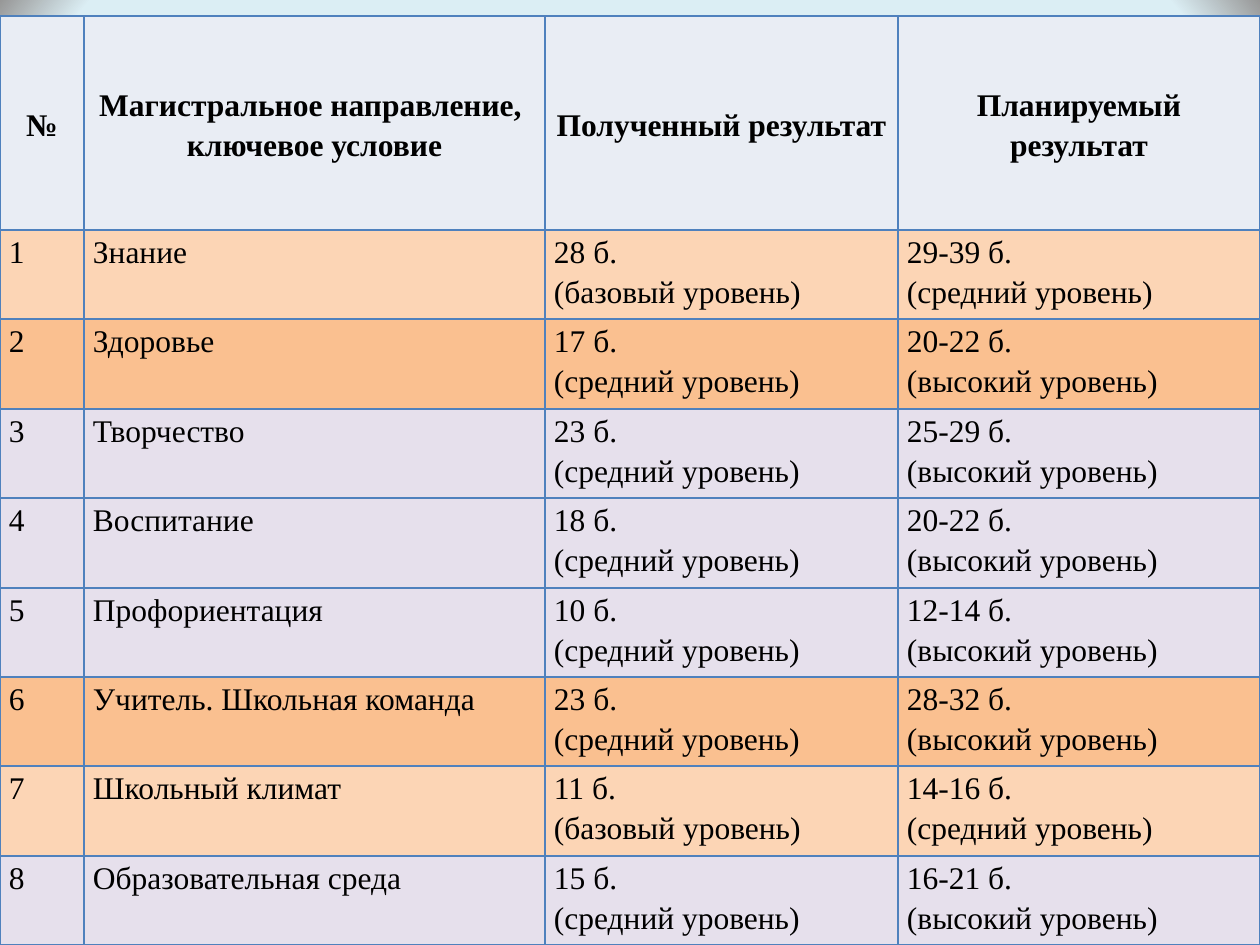
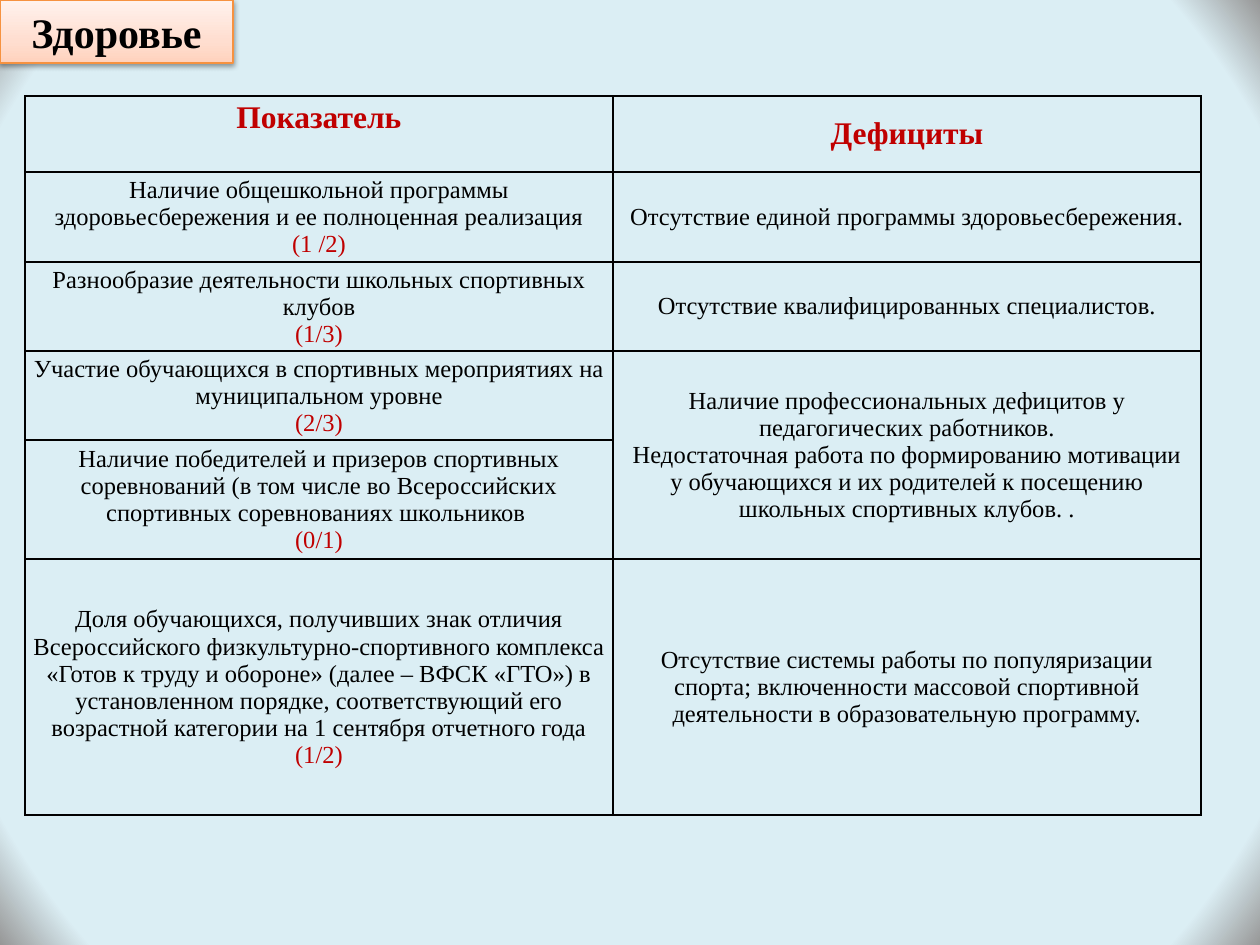
"""Build two slides on school self-assessment results and health deficits."""
from dataclasses import dataclass
from typing import NamedTuple

from lxml import etree
from pptx import Presentation
from pptx.dml.color import RGBColor
from pptx.enum.text import MSO_ANCHOR, MSO_AUTO_SIZE, PP_ALIGN
from pptx.oxml import parse_xml
from pptx.oxml.ns import nsdecls, qn
from pptx.util import Emu, Pt

CENTER, JUSTIFY = PP_ALIGN.CENTER, PP_ALIGN.JUSTIFY
TOP, MIDDLE = MSO_ANCHOR.TOP, MSO_ANCHOR.MIDDLE
FIXED_SIZE = MSO_AUTO_SIZE.NONE
TITLE_ONLY, BLANK = 5, 6
PX_PER_INCH = 126
SLIDE_W, SLIDE_H = 1260, 945
FONT = "Times New Roman"

COLORS = {
    "text": "000000", "accent": "C00000", "sky": "DBEEF4", "corner": "979797",
    "blue_line": "4F81BD", "black_line": "000000", "header": "E9EDF4",
    "basic": "FCD5B5", "focus": "FAC090", "middle": "E6E0EC",
    "badge_line": "F69240", "badge_low": "FFD2BD", "badge_mid": "FFDED0",
    "badge_high": "FFF2ED", "shadow": "000000",
}


class Stop(NamedTuple):
    """A gradient stop, with position and opacity in percent."""
    position: int
    color: str
    opacity: int = 100


class Margins(NamedTuple):
    """Cell insets in px."""
    left: int
    top: int
    right: int
    bottom: int


@dataclass(frozen=True)
class Style:
    """The look of a paragraph."""
    size: int
    color: str = "text"
    bold: bool = False
    align: PP_ALIGN = CENTER
    spacing: float = 1.0


@dataclass(frozen=True)
class CellLook:
    """The look of a table cell."""
    border: str
    margins: Margins
    fill: str | None = None
    anchor: MSO_ANCHOR = MIDDLE


class Para(NamedTuple):
    """A paragraph and its style."""
    text: str
    style: Style


class Direction(NamedTuple):
    """A direction with its obtained and planned results."""
    name: str
    score: str
    level: str
    planned_score: str
    planned_level: str
    tone: str


class Indicator(NamedTuple):
    """A health indicator, its score, the deficits and the row height."""
    name: str
    score: str
    deficits: tuple[str, ...]
    height: int


HEADINGS = ("№", "Магистральное направление, \nключевое условие",
            "Полученный результат", "Планируемый результат")
DIRECTIONS = (
    Direction("Знание", "28", "базовый", "29-39", "средний", "basic"),
    Direction("Здоровье", "17", "средний", "20-22", "высокий", "focus"),
    Direction("Творчество", "23", "средний", "25-29", "высокий", "middle"),
    Direction("Воспитание", "18", "средний", "20-22", "высокий", "middle"),
    Direction("Профориентация", "10", "средний", "12-14", "высокий", "middle"),
    Direction("Учитель. Школьная команда", "23", "средний", "28-32", "высокий", "focus"),
    Direction("Школьный климат", "11", "базовый", "14-16", "средний", "basic"),
    Direction("Образовательная среда", "15", "средний", "16-21", "высокий", "middle"),
)
INDICATORS = (
    Indicator("Наличие общешкольной программы здоровьесбережения и ее полноценная реализация",
              "(1 /2)", ("Отсутствие единой программы здоровьесбережения.",), 90),
    Indicator("Разнообразие деятельности школьных спортивных клубов",
              "(1/3)", ("Отсутствие квалифицированных специалистов.",), 89),
    Indicator("Участие обучающихся в спортивных мероприятиях на муниципальном уровне", "(2/3)",
              ("Наличие профессиональных дефицитов у педагогических работников.",
               "Недостаточная работа по формированию мотивации у обучающихся и их родителей "
               "к посещению школьных спортивных клубов. ."), 89),
    Indicator("Наличие победителей и призеров спортивных соревнований (в том числе во "
              "Всероссийских спортивных соревнованиях школьников ", "(0/1)", (), 119),
    Indicator("Доля обучающихся, получивших знак отличия Всероссийского физкультурно-спортивного "
              "комплекса «Готов к труду и обороне» (далее ‒ ВФСК «ГТО») в установленном порядке, "
              "соответствующий его возрастной категории на 1 сентября отчетного года", "(1/2)",
              ("Отсутствие системы работы по популяризации спорта; включенности массовой "
               "спортивной деятельности в образовательную программу.",), 256),
)


def px(length: int) -> Emu:
    """Turn px into EMU."""
    return Emu(round(length * 914400 / PX_PER_INCH))


def split(total: int, count: int) -> list[int]:
    """Divide a length into nearly equal whole px parts."""
    edges = [round(total * step / count) for step in range(count + 1)]
    return [end - start for start, end in zip(edges, edges[1:])]


def rgb(name: str) -> RGBColor:
    """Look up a palette colour."""
    return RGBColor.from_string(COLORS[name])


def color_xml(name: str, opacity: int = 100) -> str:
    """Return a colour element with its opacity."""
    return f'<a:srgbClr val="{COLORS[name]}"><a:alpha val="{opacity * 1000}"/></a:srgbClr>'


def fill_gradient(fill, holder, stops: tuple[Stop, ...], direction: str) -> None:
    """Give a fill several gradient stops and a direction."""
    fill.gradient()
    stops_xml = "".join(f'<a:gs pos="{s.position * 1000}">{color_xml(s.color, s.opacity)}</a:gs>'
                        for s in stops)
    source = parse_xml(f'<a:gradFill {nsdecls("a")}><a:gsLst>{stops_xml}</a:gsLst>'
                       f'{direction}</a:gradFill>')
    gradient = holder.find(f'.//{qn("a:gradFill")}')
    gradient[:] = list(source)


def paint_background(master) -> None:
    """Put the shared sky gradient on the master."""
    fill_gradient(
        master.background.fill, master.element,
        (Stop(91, "sky", 44), Stop(100, "corner")),
        '<a:path path="circle"><a:fillToRect l="50000" t="50000" r="50000" b="50000"/></a:path>')


def write(frame, paras: list[Para]) -> None:
    """Write styled paragraphs into a text frame."""
    for index, (text, style) in enumerate(paras):
        paragraph = frame.add_paragraph() if index else frame.paragraphs[0]
        paragraph.text = text
        paragraph.alignment = style.align
        paragraph.line_spacing = style.spacing
        for run in paragraph.runs:
            run.font.name = FONT
            run.font.size = Pt(style.size)
            run.font.bold = style.bold
            run.font.color.rgb = rgb(style.color)


def draw_cell(cell, paras: list[Para], look: CellLook) -> None:
    """Frame, fill and write a table cell."""
    properties = cell._tc.get_or_add_tcPr()
    for side in "LRTB":
        border = etree.SubElement(properties, qn(f"a:ln{side}"), w=str(Pt(1)))
        solid = etree.SubElement(border, qn("a:solidFill"))
        etree.SubElement(solid, qn("a:srgbClr"), val=COLORS[look.border])
    if look.fill:
        cell.fill.solid()
        cell.fill.fore_color.rgb = rgb(look.fill)
    else:
        cell.fill.background()
    cell.vertical_anchor = look.anchor
    cell.margin_left, cell.margin_top, cell.margin_right, cell.margin_bottom = map(px, look.margins)
    write(cell.text_frame, paras)


def add_grid(slide, left: int, top: int, widths: list[int], heights: list[int]):
    """Add a plain table with the given column widths and row heights."""
    table = slide.shapes.add_table(len(heights), len(widths), px(left), px(top),
                                   px(sum(widths)), px(sum(heights))).table
    table.first_row = table.horz_banding = False
    for column, width in zip(table.columns, widths):
        column.width = px(width)
    for row, height in zip(table.rows, heights):
        row.height = px(height)
    return table


def build_results(slide) -> None:
    """Draw the table of obtained and planned results."""
    heading = Style(18, bold=True, spacing=1.15)
    body = Style(18, align=JUSTIFY, spacing=1.15)
    margins = Margins(9, 0, 9, 0)
    top, header_height = 16, 214
    rows = split(SLIDE_H - top - header_height, len(DIRECTIONS))
    table = add_grid(slide, 0, top, [84, 461, 353, 362], [header_height, *rows])
    for column, text in enumerate(HEADINGS):
        draw_cell(table.cell(0, column), [Para(text, heading)],
                  CellLook("blue_line", margins, "header"))
    for number, item in enumerate(DIRECTIONS, 1):
        look = CellLook("blue_line", margins, item.tone, TOP)
        contents = ((str(number),), (item.name,),
                    (f"{item.score} б.", f"({item.level} уровень)"),
                    (f"{item.planned_score} б.", f"({item.planned_level} уровень)"))
        for column, lines in enumerate(contents):
            draw_cell(table.cell(number, column), [Para(line, body) for line in lines], look)


def build_badge(title) -> None:
    """Turn the title placeholder into the corner badge."""
    title.left, title.top, title.width, title.height = map(px, (0, 0, 233, 63))
    fill_gradient(title.fill, title.element,
                  (Stop(0, "badge_low"), Stop(35, "badge_mid"), Stop(100, "badge_high")),
                  '<a:lin ang="16200000" scaled="1"/>')
    title.line.color.rgb = rgb("badge_line")
    title.line.width = Pt(0.75)
    title.element.spPr.append(parse_xml(
        f'<a:effectLst {nsdecls("a")}><a:outerShdw blurRad="{Pt(3.1)}" dist="{Pt(1.6)}" '
        f'dir="5400000" rotWithShape="0">{color_xml("shadow", 38)}</a:outerShdw></a:effectLst>'))
    frame = title.text_frame
    frame.auto_size = FIXED_SIZE
    frame.vertical_anchor = MIDDLE
    write(frame, [Para("Здоровье", Style(24, bold=True))])


def build_health(slide) -> None:
    """Draw the badge and the table of health indicators and deficits."""
    build_badge(slide.shapes.title)
    heading = Style(18, "accent", bold=True)
    body, score = Style(14), Style(14, "accent")
    indicator_look = CellLook("black_line", Margins(1, 1, 1, 0))
    deficit_look = CellLook("black_line", Margins(13, 6, 13, 6))
    table = add_grid(slide, 25, 96, [588, 588], [76] + [item.height for item in INDICATORS])
    draw_cell(table.cell(0, 0), [Para("Показатель", heading)],
              CellLook("black_line", Margins(1, 1, 1, 34)))
    draw_cell(table.cell(0, 1), [Para("Дефициты", heading)], deficit_look)
    for row, item in enumerate(INDICATORS, 1):
        draw_cell(table.cell(row, 0), [Para(item.name, body), Para(item.score, score)],
                  indicator_look)
        draw_cell(table.cell(row, 1), [Para(text, body) for text in item.deficits], deficit_look)
        if not item.deficits:
            table.cell(row - 1, 1).merge(table.cell(row, 1))


def main() -> None:
    """Build and save the presentation."""
    deck = Presentation()
    deck.slide_width, deck.slide_height = px(SLIDE_W), px(SLIDE_H)
    paint_background(deck.slide_master)
    build_results(deck.slides.add_slide(deck.slide_layouts[BLANK]))
    build_health(deck.slides.add_slide(deck.slide_layouts[TITLE_ONLY]))
    deck.save("out.pptx")


if __name__ == "__main__":
    main()
